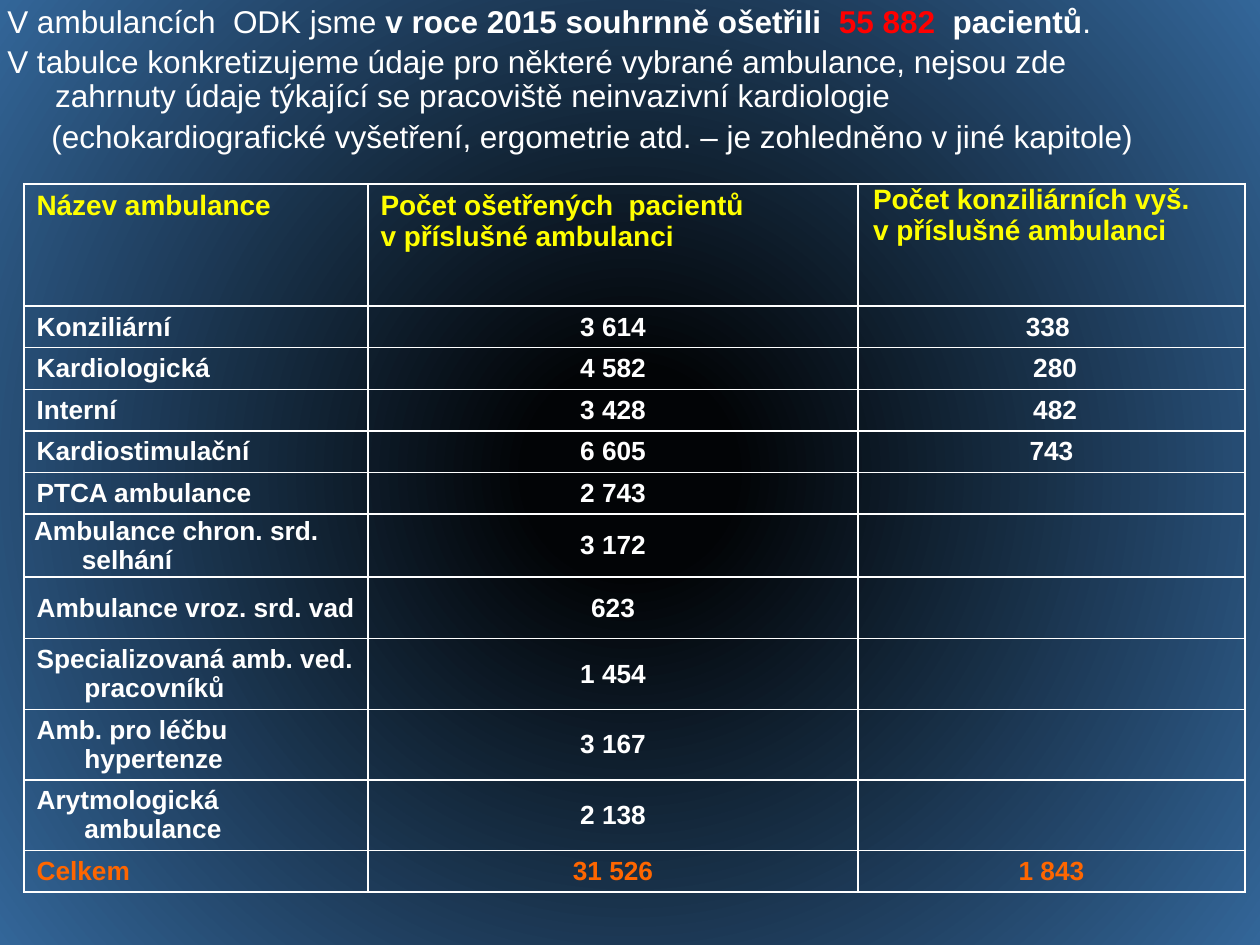
from dataclasses import dataclass

from lxml import etree
from pptx import Presentation
from pptx import util as u
from pptx.dml.color import RGBColor
from pptx.enum import text
from pptx.oxml import ns


@dataclass(frozen=True)
class Theme:
    font: str = "Arial"
    white: str = "FFFFFF"
    heading: str = "FFFF00"
    accent: str = "FF0000"
    total: str = "FF6600"
    center: str = "020406"
    edge: str = "336699"
    intro_size: int = 18
    header_size: int = 16
    body_size: int = 15
    border_width: int = 1


THEME = Theme()
HANGING = 0.38
COLUMNS = [2.73, 3.89, 3.07]
HEADER_HEIGHT = 0.97
HEADERS = [
    ["Název ambulance"],
    ["Počet ošetřených  pacientů", "v příslušné ambulanci"],
    ["Počet konziliárních vyš.", "v příslušné ambulanci"],
]
ROWS = [
    (0.33, "Konziliární", "3 614", "338 "),
    (0.33, "Kardiologická", "4 582", " 280"),
    (0.33, "Interní", "3 428", " 482"),
    (0.33, "Kardiostimulační", "6 605", " 743 "),
    (0.33, "PTCA ambulance", "2 743", ""),
    (0.49, "Ambulance chron. srd. selhání", "3 172", ""),
    (0.49, "Ambulance vroz. srd. vad", "623", ""),
    (0.56, "Specializovaná amb. ved. pracovníků", "1 454", ""),
    (0.56, "Amb. pro léčbu hypertenze", "3 167", ""),
    (0.56, "Arytmologická ambulance", "2 138", ""),
    (0.33, "Celkem", "31 526", "1 843"),
]
INTRO = [
    [
        ("V ambulancích  ODK jsme ", False, THEME.white),
        ("v roce 2015 souhrnně ošetřili  ", True, THEME.white),
        ("55 882  ", True, THEME.accent),
        ("pacientů", True, THEME.white),
        (".", False, THEME.white),
    ],
    [("V tabulce konkretizujeme údaje pro některé vybrané ambulance, nejsou zde "
      "zahrnuty údaje týkající se pracoviště neinvazivní kardiologie",
      False, THEME.white)],
    [("(echokardiografické vyšetření, ergometrie atd. – je zohledněno "
      "v jiné kapitole)", False, THEME.white)],
]


def set_indent(paragraph, left, first):
    properties = paragraph._p.get_or_add_pPr()
    properties.set("marL", str(u.Inches(left)))
    properties.set("indent", str(u.Inches(first)))


def style_font(font, size, color, bold):
    font.name = THEME.font
    font.size = u.Pt(size)
    font.bold = bold
    font.color.rgb = RGBColor.from_string(color)


def set_margins(target, left, top, right, bottom):
    target.margin_left = u.Inches(left)
    target.margin_top = u.Inches(top)
    target.margin_right = u.Inches(right)
    target.margin_bottom = u.Inches(bottom)


def paint_background(slide):
    fill = slide.background.fill
    fill.gradient()
    for stop, position, color in zip(
        fill.gradient_stops, (0.13, 1), (THEME.center, THEME.edge)
    ):
        stop.position = position
        stop.color.rgb = RGBColor.from_string(color)
    gradient = slide._element.find(".//" + ns.qn("a:gradFill"))
    gradient.remove(gradient.find(ns.qn("a:lin")))
    circle = etree.SubElement(gradient, ns.qn("a:path"), path="circle")
    etree.SubElement(circle, ns.qn("a:fillToRect"),
                     dict.fromkeys("ltrb", "50000"))


def add_intro(slide):
    box = slide.shapes.add_textbox(
        u.Inches(-0.04), u.Inches(0), u.Inches(9.14), u.Inches(1.65)
    )
    frame = box.text_frame
    frame.word_wrap = True
    indents = [(HANGING, -HANGING), (HANGING, -HANGING), (0.35, 0)]
    for index, (runs, indent) in enumerate(zip(INTRO, indents)):
        paragraph = frame.add_paragraph() if index else frame.paragraphs[0]
        set_indent(paragraph, *indent)
        paragraph.line_spacing = 0.9
        paragraph.space_before = u.Pt(0.2 * THEME.intro_size)
        for content, bold, color in runs:
            run = paragraph.add_run()
            run.text = content
            style_font(run.font, THEME.intro_size, color, bold)


def add_borders(cell):
    properties = cell._tc.get_or_add_tcPr()
    for index, side in enumerate(("lnL", "lnR", "lnT", "lnB")):
        line = etree.Element(ns.qn(f"a:{side}"), w=str(u.Pt(THEME.border_width)))
        fill = etree.SubElement(line, ns.qn("a:solidFill"))
        etree.SubElement(fill, ns.qn("a:srgbClr"), val=THEME.white)
        properties.insert(index, line)


def fill_cell(cell, lines, size, color, alignment):
    frame = cell.text_frame
    for index, line in enumerate(lines):
        paragraph = frame.add_paragraph() if index else frame.paragraphs[0]
        paragraph.text = line
        paragraph.alignment = alignment
        set_indent(paragraph, HANGING, -HANGING)
        style_font(paragraph.font, size, color, True)


def add_clinic_table(slide):
    heights = [HEADER_HEIGHT] + [row[0] for row in ROWS]
    table = slide.shapes.add_table(
        len(heights), len(COLUMNS), u.Inches(0.19), u.Inches(1.46),
        u.Inches(sum(COLUMNS)), u.Inches(sum(heights))
    ).table
    table.first_row = False
    table.horz_banding = False
    for column, width in zip(table.columns, COLUMNS):
        column.width = u.Inches(width)
    for row, height in zip(table.rows, heights):
        row.height = u.Inches(height)
    for cell in table.iter_cells():
        cell.fill.background()
        add_borders(cell)

    for index, lines in enumerate(HEADERS):
        cell = table.cell(0, index)
        set_margins(cell, 0.1, 0.05, 0.1, 0.05)
        fill_cell(cell, lines, THEME.header_size, THEME.heading,
                  text.PP_ALIGN.LEFT)
    set_margins(table.cell(0, 2), 0.12, 0, 0, 0)

    for row, (_, *values) in enumerate(ROWS, 1):
        color = THEME.total if row == len(ROWS) else THEME.white
        for column, value in enumerate(values):
            cell = table.cell(row, column)
            cell.vertical_anchor = text.MSO_ANCHOR.MIDDLE
            if value:
                alignment = text.PP_ALIGN.CENTER if column else text.PP_ALIGN.LEFT
                set_margins(cell, 0.1, 0.03, 0.1, 0.03)
                fill_cell(cell, [value], THEME.body_size, color, alignment)
            else:
                set_margins(cell, 0, 0, 0, 0)
        if values[0].startswith("Ambulance chron."):
            set_margins(table.cell(row, 0), 0.08, 0, 0, 0)


def main():
    presentation = Presentation()
    presentation.slide_width = u.Inches(10)
    presentation.slide_height = u.Inches(7.5)
    slide = presentation.slides.add_slide(presentation.slide_layouts[6])
    paint_background(slide)
    add_intro(slide)
    add_clinic_table(slide)
    presentation.save("out.pptx")


if __name__ == "__main__":
    main()
